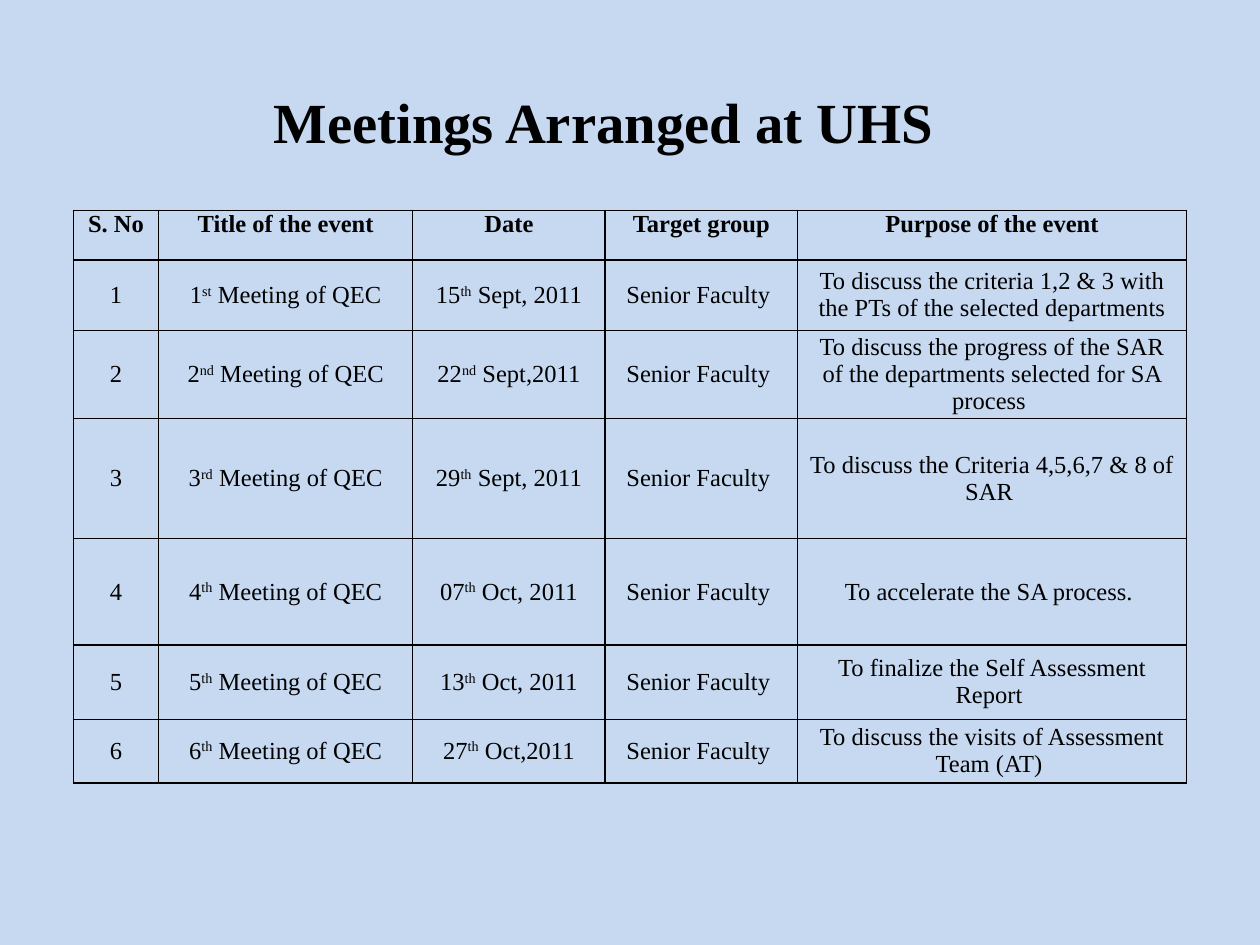
from lxml.etree import SubElement as Sub
from pptx import Presentation
from pptx.dml.color import RGBColor
from pptx.enum.text import MSO_ANCHOR as Anchor, PP_ALIGN as Align
from pptx.oxml.ns import qn
from pptx.util import Cm, Pt

SKY = RGBColor(0xC6, 0xD9, 0xF1)
BLACK = RGBColor(0, 0, 0)
FACE = "Times New Roman"

WIDTHS = [1.72, 5.12, 3.88, 3.88, 7.84]
HEIGHTS = [1, 1.42, 1.63, 2.42, 2.14, 1.5, 1.28]
HEADS = ["S. No", "Title of the event", "Date", "Target group",
         "Purpose of the event"]
# Ordinal suffix of the meeting, date, purpose; ^ encloses a superscript
MEETINGS = [
    ("st", "15^th^ Sept, 2011",
     "To discuss the criteria 1,2 & 3 with the PTs of the selected departments"),
    ("nd", "22^nd^ Sept,2011",
     "To discuss the progress of the SAR of the departments selected for SA process "),
    ("rd", "29^th^ Sept, 2011", "To discuss the Criteria 4,5,6,7 & 8 of SAR "),
    ("th", "07^th^ Oct, 2011", "To accelerate the SA process. "),
    ("th", "13^th^ Oct, 2011", "To finalize the Self Assessment Report "),
    ("th", "27^th^ Oct,2011", "To discuss the visits of Assessment Team (AT) "),
]


def write(para, text, size, bold=False):
    """Fill a centred paragraph, raising the parts between ^ marks."""
    para.alignment = Align.CENTER
    font = para.font
    font.name, font.size, font.bold = FACE, Pt(size), bold
    font.color.rgb = BLACK
    for i, part in enumerate(text.split("^")):
        run = para.add_run()
        run.text = part
        if i % 2:
            run._r.get_or_add_rPr().set("baseline", "30000")


def add_title(slide):
    box = slide.shapes.add_textbox(Cm(1.48), Cm(0.84), Cm(21.38), Cm(3.18))
    frame = box.text_frame
    frame.word_wrap = True
    frame.vertical_anchor = Anchor.MIDDLE
    write(frame.paragraphs[0], "Meetings Arranged at UHS", 32.4, True)


def add_edges(cell):
    props = cell._tc.get_or_add_tcPr()
    for side in ("lnL", "lnR", "lnT", "lnB"):
        line = Sub(props, qn(f"a:{side}"), w=str(Pt(1)))
        fill = Sub(line, qn("a:solidFill"))
        Sub(fill, qn("a:srgbClr"), val=str(BLACK))


def fill_cell(cell, text, head):
    cell.margin_left = cell.margin_right = Cm(0.18)
    cell.margin_top = cell.margin_bottom = 0
    cell.vertical_anchor = Anchor.TOP if head else Anchor.MIDDLE
    add_edges(cell)
    cell.fill.background()
    write(cell.text_frame.paragraphs[0], text, 14, head)


def add_grid(slide):
    rows = [HEADS] + [
        [str(n), f"{n}^{suffix}^ Meeting of QEC", date, "Senior Faculty ", goal]
        for n, (suffix, date, goal) in enumerate(MEETINGS, 1)]
    table = slide.shapes.add_table(
        len(rows), len(HEADS), Cm(1.48), Cm(4.24),
        Cm(sum(WIDTHS)), Cm(sum(HEIGHTS))).table
    table.first_row = table.horz_banding = False
    for col, width in zip(table.columns, WIDTHS):
        col.width = Cm(width)
    for r, (texts, height) in enumerate(zip(rows, HEIGHTS)):
        table.rows[r].height = Cm(height)
        for c, text in enumerate(texts):
            fill_cell(table.cell(r, c), text, r == 0)


def main():
    deck = Presentation()
    deck.slide_width, deck.slide_height = Cm(25.4), Cm(19.05)
    slide = deck.slides.add_slide(deck.slide_layouts[6])
    back = slide.background.fill
    back.solid()
    back.fore_color.rgb = SKY
    add_title(slide)
    add_grid(slide)
    deck.save("out.pptx")


if __name__ == "__main__":
    main()
